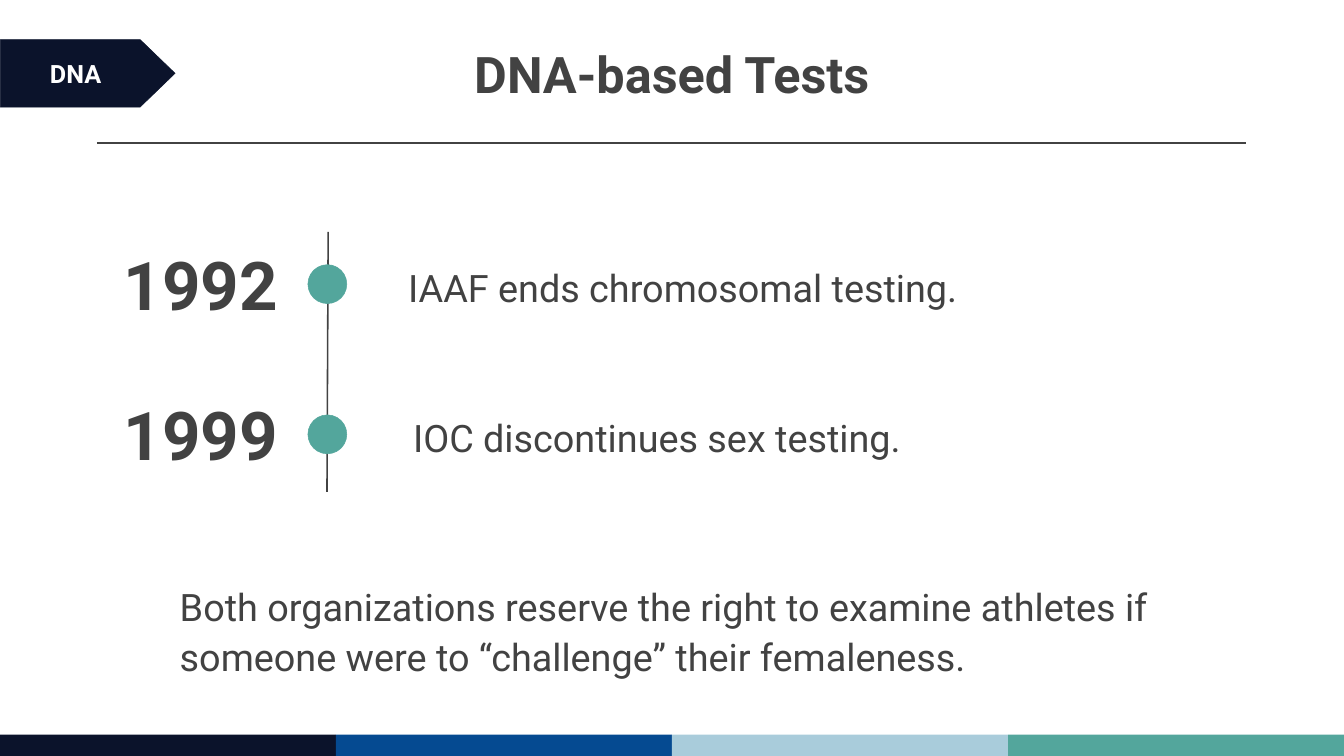
"""Build the DNA-based Tests timeline slide."""
from dataclasses import dataclass

from lxml.etree import SubElement
from pptx import Presentation
from pptx.dml.color import RGBColor
from pptx.enum.shapes import MSO_CONNECTOR, MSO_SHAPE
from pptx.enum.text import MSO_ANCHOR, MSO_AUTO_SIZE, PP_ALIGN
from pptx.oxml.ns import qn
from pptx.util import Cm, Pt


@dataclass(frozen=True)
class Theme:
    font: str = "Roboto"
    ink: str = "424242"
    navy: str = "0B132B"
    blue: str = "054A91"
    sky: str = "A9CCDB"
    teal: str = "53A69C"
    white: str = "FFFFFF"
    title_size: int = 72
    year_size: int = 96
    body_size: int = 54
    tag_size: int = 36


THEME = Theme()
WIDTH, HEIGHT = 67.74, 38.1
TITLE = "DNA-based Tests"
TAG = "DNA"
EVENTS = [
    ("1992", "IAAF ends chromosomal testing.", 20.32),
    ("1999", "IOC discontinues sex testing.", 20.57),
]
NOTE = (
    "Both organizations reserve the right to examine athletes if "
    "someone were to “challenge” their femaleness."
)
FOOTER_COLORS = [THEME.navy, THEME.blue, THEME.sky, THEME.teal]
FOOTER_HEIGHT = 1.07
ROW_PITCH = 7.57
YEAR_TOP, DOT_TOP, DETAIL_TOP = 12.01, 13.34, 12.85


def write(shape, text, size, color=THEME.ink, bold=False, align=PP_ALIGN.LEFT,
          anchor=MSO_ANCHOR.TOP, inset=0.25, spacing=None, before=None):
    frame = shape.text_frame
    frame.text = text
    frame.word_wrap = True
    frame.auto_size = MSO_AUTO_SIZE.NONE
    frame.vertical_anchor = anchor
    frame.margin_left = frame.margin_right = Cm(inset)
    frame.margin_top = frame.margin_bottom = Cm(inset)
    paragraph = frame.paragraphs[0]
    paragraph.alignment = align
    if spacing:
        paragraph.line_spacing = spacing
    if before:
        paragraph.space_before = Pt(before)
    font = paragraph.runs[0].font
    font.name, font.size, font.bold = THEME.font, Pt(size), bold
    font.color.rgb = RGBColor.from_string(color)


def add_text(slide, box, text, size, **style):
    write(slide.shapes.add_textbox(*map(Cm, box)), text, size, **style)


def add_detail(slide, box, text):
    add_text(slide, box, text, THEME.body_size, spacing=1.1, before=26)


def add_block(slide, kind, box, color, outlined=False):
    block = slide.shapes.add_shape(kind, *map(Cm, box))
    block.shadow.inherit = False
    block.fill.solid()
    block.fill.fore_color.rgb = RGBColor.from_string(color)
    if outlined:
        block.line.color.rgb = RGBColor.from_string(color)
        block.line.width = Pt(0.75)
    else:
        block.line.fill.background()
    return block


def add_line(slide, ends, weight):
    line = slide.shapes.add_connector(MSO_CONNECTOR.STRAIGHT, *map(Cm, ends))
    line.line.color.rgb = RGBColor.from_string(THEME.ink)
    line.line.width = Pt(weight)
    SubElement(line._element.spPr, qn("a:effectLst"))


def add_frame(slide):
    add_line(slide, (4.88, 7.19, 62.79, 7.19), 3)
    step = WIDTH / len(FOOTER_COLORS)
    for index, color in enumerate(FOOTER_COLORS):
        box = (index * step, HEIGHT - FOOTER_HEIGHT, step, FOOTER_HEIGHT)
        add_block(slide, MSO_SHAPE.RECTANGLE, box, color)


def add_title(slide):
    title = slide.shapes.title
    title.left, title.top, title.width, title.height = map(
        Cm, (12.93, 1.24, 41.88, 5.46))
    write(title, TITLE, THEME.title_size, bold=True, align=PP_ALIGN.CENTER,
          anchor=MSO_ANCHOR.MIDDLE, inset=0, spacing=0.8)


def add_tag(slide):
    arrow = add_block(slide, MSO_SHAPE.FLOWCHART_OFFPAGE_CONNECTOR,
                      (2.72, -0.71, 3.4, 8.81), THEME.navy, outlined=True)
    arrow.rotation = 270
    add_text(slide, (0.66, 2.67, 6.3, 2.06), TAG, THEME.tag_size,
             color=THEME.white, bold=True, align=PP_ALIGN.CENTER,
             anchor=MSO_ANCHOR.MIDDLE)


def add_timeline(slide):
    add_line(slide, (16.54, 11.68, 16.48, 24.79), 2.25)
    for row, (year, detail, detail_left) in enumerate(EVENTS):
        drop = row * ROW_PITCH
        add_block(slide, MSO_SHAPE.OVAL, (15.52, DOT_TOP + drop, 1.96, 1.96),
                  THEME.teal, outlined=True)
        add_text(slide, (5.99, YEAR_TOP + drop, 8.36, 4.62), year,
                 THEME.year_size, bold=True)
        add_detail(slide, (detail_left, DETAIL_TOP + drop, 34.67, 2.82), detail)


def main():
    deck = Presentation()
    deck.slide_width, deck.slide_height = Cm(WIDTH), Cm(HEIGHT)
    slide = deck.slides.add_slide(deck.slide_layouts[5])
    add_frame(slide)
    add_title(slide)
    add_timeline(slide)
    add_tag(slide)
    add_detail(slide, (8.81, 28.96, 50.11, 5.36), NOTE)
    deck.save("out.pptx")


if __name__ == "__main__":
    main()
